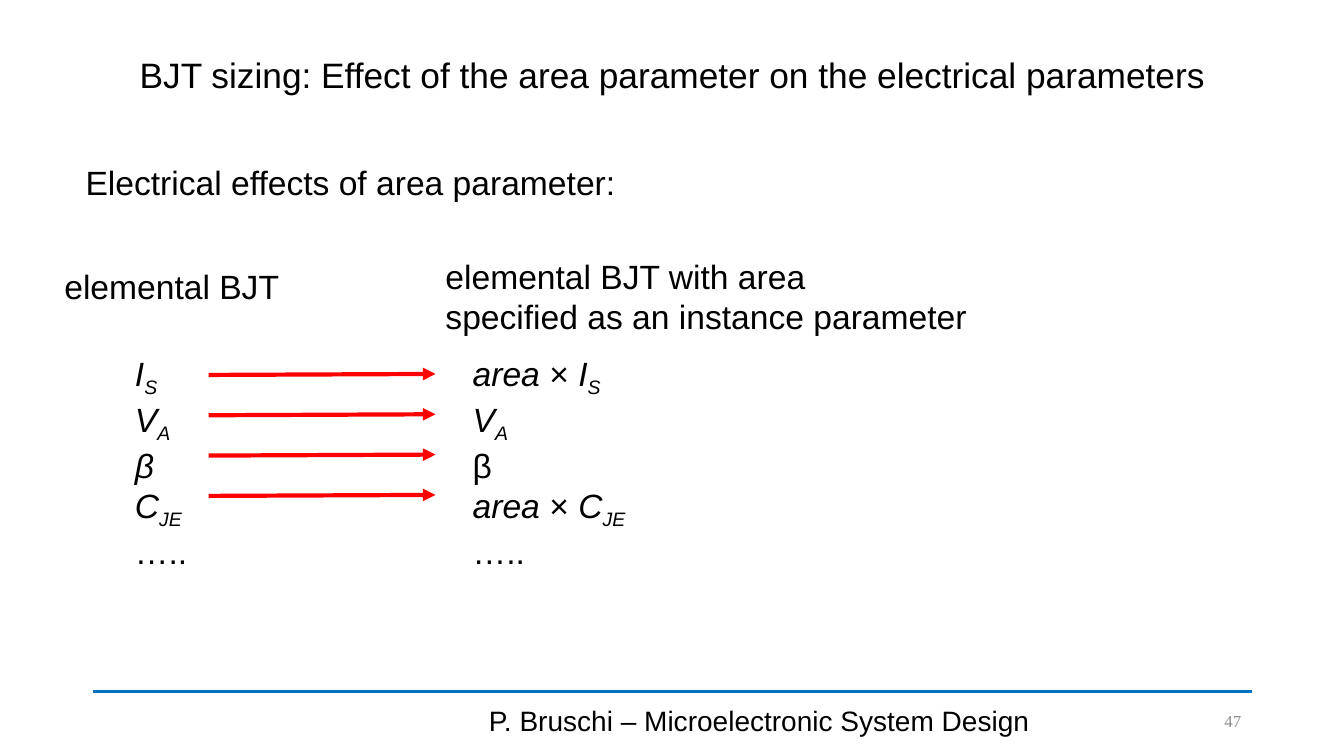
from lxml import etree
from pptx import Presentation
from pptx.dml.color import RGBColor
from pptx.enum.shapes import MSO_CONNECTOR
from pptx.enum.text import MSO_ANCHOR, MSO_AUTO_SIZE, PP_ALIGN
from pptx.oxml.ns import qn
from pptx.util import Inches, Pt

STRAIGHT = MSO_CONNECTOR.STRAIGHT
MIDDLE, TOP = MSO_ANCHOR.MIDDLE, MSO_ANCHOR.TOP
LEFT, CENTER, RIGHT = PP_ALIGN.LEFT, PP_ALIGN.CENTER, PP_ALIGN.RIGHT
NO_AUTO_SIZE = MSO_AUTO_SIZE.NONE
TITLE_ONLY = 5

COLORS = {"text": "000000", "number": "8C8C8C", "rule": "0070C0", "arrow": "FF0000"}

PLAIN, ITALIC, SUBSCRIPT = "plain", "italic", "subscript"
ELEMENTAL = [
    [("I", ITALIC), ("S", SUBSCRIPT)],
    [("V", ITALIC), ("A", SUBSCRIPT)],
    [("β", ITALIC)],
    [("C", ITALIC), ("JE", SUBSCRIPT)],
    [("…..", PLAIN)],
]
WITH_AREA = [
    [("area", ITALIC), (" ×", PLAIN), (" I", ITALIC), ("S", SUBSCRIPT)],
    [("V", ITALIC), ("A", SUBSCRIPT)],
    [("β", PLAIN)],
    [("area ", ITALIC), ("× ", PLAIN), ("C", ITALIC), ("JE", SUBSCRIPT)],
    [("…..", PLAIN)],
]


def plain_lines(*lines):
    return [[(line, PLAIN)] for line in lines]


def place(shape, left, top, width, height):
    shape.left, shape.top = Inches(left), Inches(top)
    shape.width, shape.height = Inches(width), Inches(height)


def write_text(shape, lines, size=24, font="Arial", color="text",
               align=LEFT, anchor=TOP, wrap=False):
    """Fill a shape with lines, each a list of (text, style) runs."""
    frame = shape.text_frame
    frame.auto_size = NO_AUTO_SIZE
    frame.word_wrap = wrap
    frame.vertical_anchor = anchor
    for index, line in enumerate(lines):
        paragraph = frame.add_paragraph() if index else frame.paragraphs[0]
        paragraph.alignment = align
        for text, style in line:
            run = paragraph.add_run()
            run.text = text
            run.font.size = Pt(size)
            run.font.name = font
            run.font.italic = style != PLAIN
            run.font.color.rgb = RGBColor.from_string(COLORS[color])
            if style == SUBSCRIPT:
                run._r.get_or_add_rPr().set("baseline", "-25000")


def add_text(slide, box, lines, **options):
    shape = slide.shapes.add_textbox(*(Inches(length) for length in box))
    write_text(shape, lines, **options)


def add_line(slide, start, end, color, width, arrowhead=False):
    points = (Inches(length) for length in start + end)
    connector = slide.shapes.add_connector(STRAIGHT, *points)
    connector.line.color.rgb = RGBColor.from_string(COLORS[color])
    connector.line.width = Pt(width)
    if arrowhead:
        line = connector.line._get_or_add_ln()
        etree.SubElement(line, qn("a:tailEnd"), type="triangle")
    etree.SubElement(connector._element.spPr, qn("a:effectLst"))


def add_title(slide, text):
    title = slide.shapes.title
    place(title, 0.92, 0.4, 11.5, 0.72)
    write_text(title, plain_lines(text), size=25.2, align=CENTER, anchor=MIDDLE, wrap=True)
    title.text_frame.paragraphs[0].line_spacing = 0.9


def add_footer(slide):
    add_line(slide, (0.92, 6.86), (12.42, 6.86), "rule", 2.75)
    add_text(slide, (4.42, 6.95, 6.22, 0.4),
             plain_lines("P. Bruschi – Microelectronic System Design"),
             size=20, align=CENTER, anchor=MIDDLE, wrap=True)
    add_text(slide, (11.45, 6.95, 0.96, 0.4), plain_lines("47"), size=12,
             font="Times New Roman", color="number", align=RIGHT, anchor=MIDDLE, wrap=True)


def main():
    presentation = Presentation()
    presentation.slide_width, presentation.slide_height = Inches(13.33), Inches(7.5)
    slide = presentation.slides.add_slide(presentation.slide_layouts[TITLE_ONLY])

    add_title(slide, "BJT sizing: Effect of the area parameter on the electrical parameters")
    add_footer(slide)
    add_text(slide, (0.75, 1.56, 5.6, 0.5), plain_lines("Electrical effects of area parameter:"))
    add_text(slide, (0.54, 2.59, 2.44, 0.5), plain_lines("elemental BJT"))
    add_text(slide, (4.32, 2.49, 5.43, 0.91),
             plain_lines("elemental BJT with area", "specified as an instance parameter"))
    add_text(slide, (1.24, 3.45, 0.72, 2.12), ELEMENTAL)
    add_text(slide, (4.59, 3.45, 1.76, 2.12), WITH_AREA)
    for row in range(4):
        top = 3.72 + 0.4 * row
        add_line(slide, (2.07, top), (4.32, top - 0.01), "arrow", 3, arrowhead=True)

    presentation.save("out.pptx")


if __name__ == "__main__":
    main()
